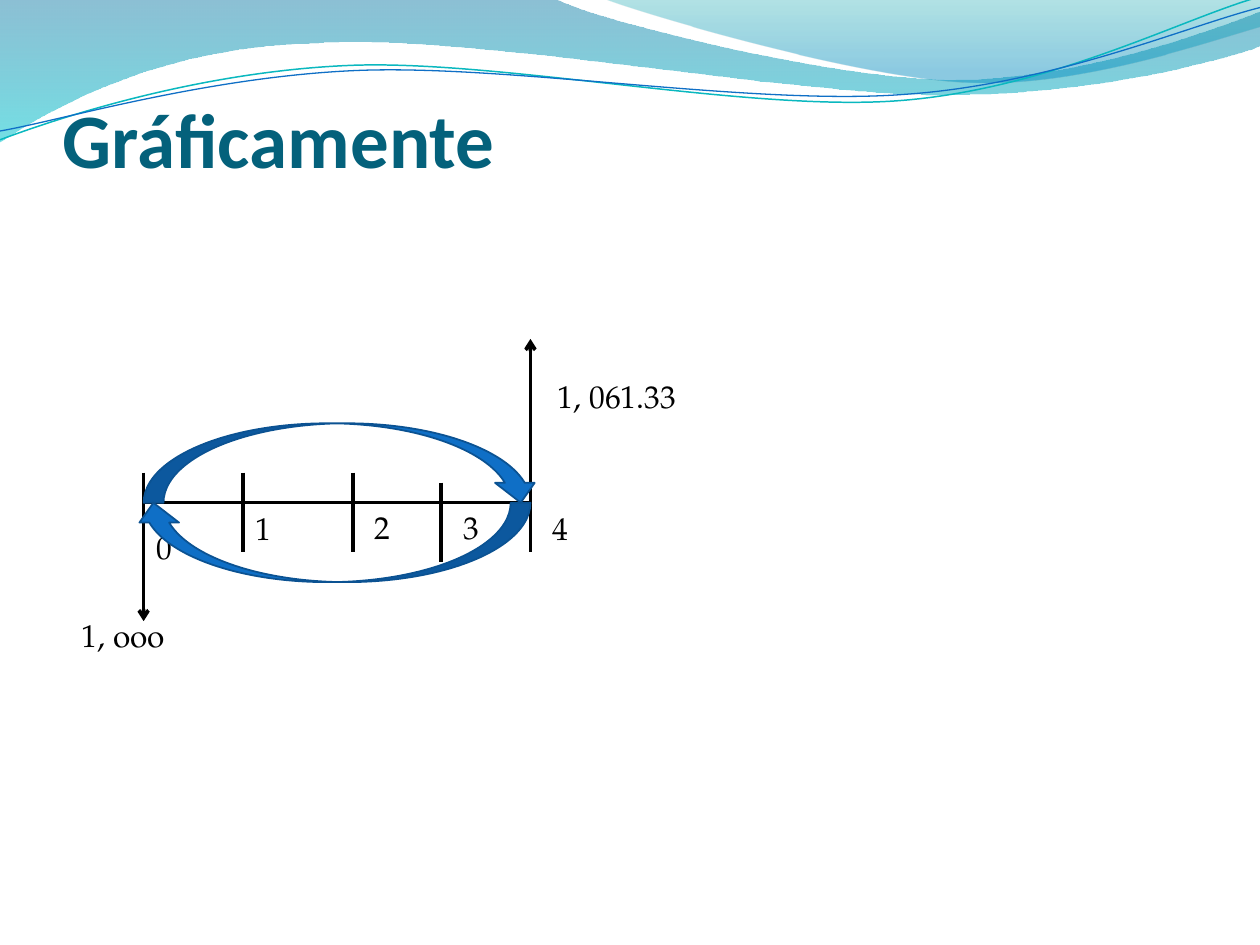
from lxml import etree
from pptx import Presentation
from pptx.dml.color import RGBColor
from pptx.enum import shapes, text
from pptx.oxml.ns import qn
from pptx.util import Inches, Pt

BLACK, BLUE, DARK_BLUE, TEAL = "000000", "0F6FC6", "0B5292", "04617B"
BODY_FONT = "TeX Gyre Pagella"

# Each wave is a list of segments: two numbers draw a line, six a Bezier curve
BACK_WAVE = [(0, 0), (4.4, -0.01), (4.76, 0.17, 6.64, 0.63, 7.58, 0.63),
             (8.53, 0.63, 9.58, 0.26, 10, 0.09), (10.01, 0.36),
             (9.83, 0.44, 8.7, 0.76, 7.46, 0.75),
             (6.22, 0.75, 3.82, 0.28, 2.57, 0.34),
             (1.29, 0.36, 0.46, 0.83, -0.01, 1.13), (0, 0)]
FRONT_WAVE = [(4.79, -0.01), (5.09, 0.11, 6.82, 0.62, 7.69, 0.65),
              (8.56, 0.69, 9.61, 0.32, 10, 0.21), (10, 0), (4.79, -0.01)]
TEAL_WAVE = [(0, 1.11), (0.48, 0.93, 1.58, 0.57, 2.77, 0.52),
             (3.95, 0.47, 5.93, 0.89, 7.13, 0.8),
             (8.33, 0.71, 9.38, 0.15, 9.98, -0.02)]
BLUE_WAVE = [(0, 1.04), (0.47, 0.96, 1.64, 0.61, 2.83, 0.56),
             (4.03, 0.51, 5.97, 0.84, 7.17, 0.75),
             (8.36, 0.67, 9.41, 0.21, 10, 0.06)]


def color(value):
    return RGBColor.from_string(value)


def add_wave(slide, segments, closed):
    points = [(Inches(x), Inches(y)) for segment in segments
              for x, y in zip(segment[::2], segment[1::2])]
    builder = slide.shapes.build_freeform(*points[0])
    builder.add_line_segments(points[1:], close=closed)
    shape = builder.convert_to_shape()
    shape.shadow.inherit = False
    # Join the three lines of each six-number segment into one Bezier curve
    lines = iter(list(shape._element.iter(qn("a:lnTo"))))
    for segment in segments[1:]:
        first, *others = [next(lines) for _ in range(len(segment) // 2)]
        if others:
            curve = etree.Element(qn("a:cubicBezTo"))
            first.addprevious(curve)
            for line in (first, *others):
                curve.append(line[0])
                line.getparent().remove(line)
    return shape


def add_filled_wave(slide, segments, stops):
    shape = add_wave(slide, segments, closed=True)
    shape.line.fill.background()
    shape.fill.gradient()
    shape.fill.gradient_angle = 270
    for stop, (position, value, _) in zip(shape.fill.gradient_stops, stops):
        stop.position = position
        stop.color.rgb = color(value)
    # Transparency of each stop
    for element, (_, _, opacity) in zip(shape._element.iter(qn("a:srgbClr")), stops):
        etree.SubElement(element, qn("a:alpha"), val=str(opacity * 1000))


def add_line_wave(slide, segments, value, width):
    shape = add_wave(slide, segments, closed=False)
    shape.fill.background()
    shape.line.color.rgb = color(value)
    shape.line.width = Pt(width)


def add_text(slide, content, left, top, width=0.55, height=0.4, *, size=18,
             font=BODY_FONT, value=BLACK, bold=False,
             anchor=text.MSO_ANCHOR.TOP, side_margin=0.1, bottom_margin=0.05):
    box = slide.shapes.add_textbox(Inches(left), Inches(top), Inches(width), Inches(height))
    frame = box.text_frame
    frame.word_wrap = True
    frame.vertical_anchor = anchor
    frame.margin_left = frame.margin_right = Inches(side_margin)
    frame.margin_bottom = Inches(bottom_margin)
    run = frame.paragraphs[0].add_run()
    run.text = content
    run.font.size = Pt(size)
    run.font.name = font
    run.font.bold = bold
    run.font.color.rgb = color(value)


def add_line(slide, x1, y1, x2, y2, arrow=False):
    line = slide.shapes.add_connector(
        shapes.MSO_CONNECTOR.STRAIGHT, Inches(x1), Inches(y1), Inches(x2), Inches(y2))
    line.line.color.rgb = color(BLACK)
    line.line.width = Pt(2)
    if arrow:
        etree.SubElement(line.line._get_or_add_ln(), qn("a:tailEnd"), type="arrow")
    etree.SubElement(line._element.spPr, qn("a:effectLst"))


def add_curved_arrow(slide, left, top, rotation=0):
    arrow = slide.shapes.add_shape(
        shapes.MSO_SHAPE.CURVED_DOWN_ARROW,
        Inches(left), Inches(top), Inches(3.15), Inches(0.63))
    arrow.rotation = rotation
    arrow.shadow.inherit = False
    arrow.fill.solid()
    arrow.fill.fore_color.rgb = color(BLUE)
    arrow.line.color.rgb = color(DARK_BLUE)
    arrow.line.width = Pt(1)


def main():
    presentation = Presentation()
    presentation.slide_width, presentation.slide_height = Inches(10), Inches(7.5)
    slide = presentation.slides.add_slide(presentation.slide_layouts[6])

    # Wave decoration
    add_filled_wave(slide, BACK_WAVE, [(0, "0074A1", 45), (1, "00C6CF", 55)])
    add_filled_wave(slide, FRONT_WAVE, [(0, "00A1A9", 30), (0.8, "008BBF", 45)])
    add_line_wave(slide, TEAL_WAVE, "0AB8BF", 0.85)
    add_line_wave(slide, BLUE_WAVE, BLUE, 0.75)

    # Title
    add_text(slide, "Gráficamente", 0.5, 0.21, 9, 1.25, size=44, font="Calibri",
             value=TEAL, bold=True, anchor=text.MSO_ANCHOR.BOTTOM,
             side_margin=0, bottom_margin=0)

    # Time axis with its period marks
    start, end, axis = 1.14, 4.21, 3.99
    add_line(slide, start, axis, end, axis)
    for x, top in [(start, 3.75), (1.93, 3.75), (2.8, 3.75), (3.5, 3.83), (end, 3.75)]:
        add_line(slide, x, top, x, top + 0.63)
    for period, (left, top) in enumerate(
            [(1.14, 4.14), (1.93, 3.99), (2.87, 3.98), (3.58, 3.98), (4.29, 3.99)]):
        add_text(slide, str(period), left, top)

    # Cash flows
    add_line(slide, end, axis, end, 2.69, arrow=True)
    add_line(slide, start, axis, start, 4.93, arrow=True)
    add_text(slide, "1, ooo", 0.55, 4.84, 1.18)
    add_text(slide, "1, 061.33", 4.33, 2.94, 1.18)

    # Equivalence arrows
    add_curved_arrow(slide, 1.14, 3.36)
    add_curved_arrow(slide, 1.06, axis, rotation=180)

    presentation.save("out.pptx")


if __name__ == "__main__":
    main()
